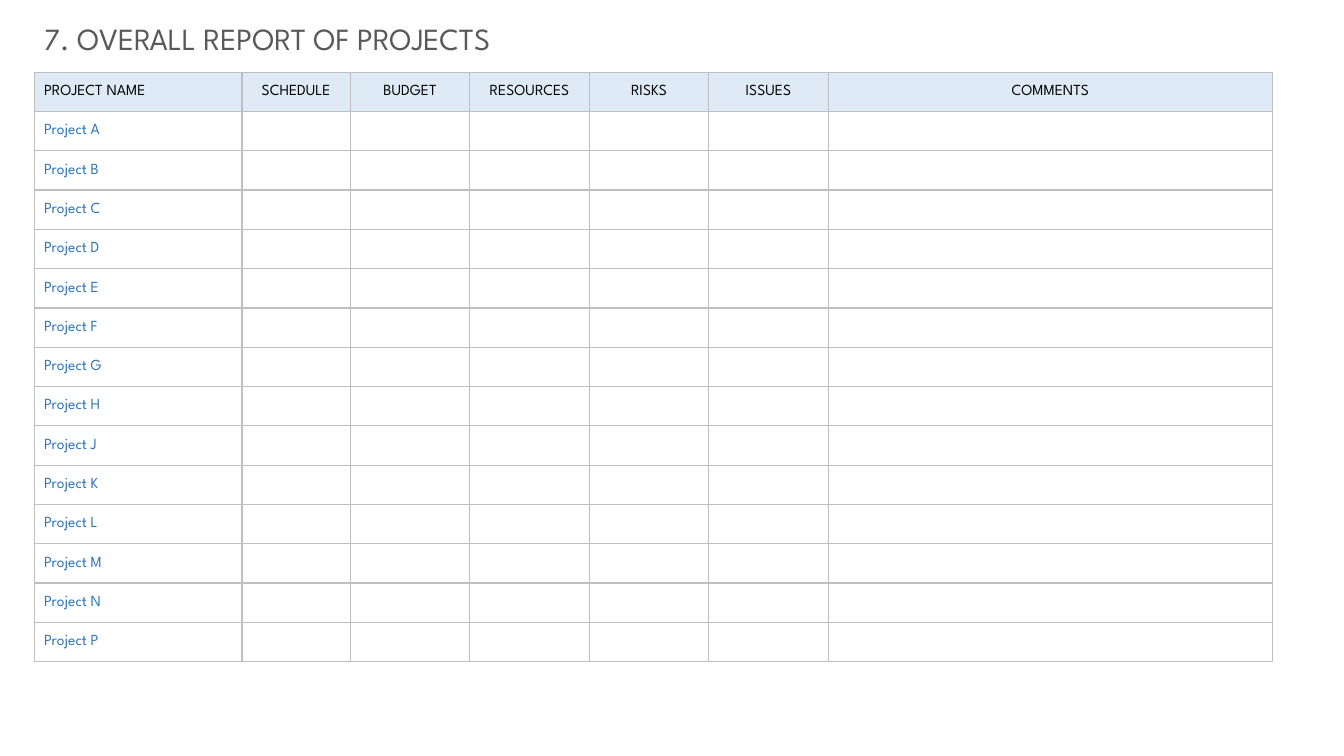
from dataclasses import dataclass

from lxml.etree import SubElement
from pptx import Presentation
from pptx.dml.color import RGBColor
from pptx.enum.text import MSO_ANCHOR, MSO_AUTO_SIZE, PP_ALIGN
from pptx.oxml.ns import qn
from pptx.slide import Slide
from pptx.table import _Cell as Cell
from pptx.text.text import _Paragraph as Paragraph
from pptx.util import Cm, Pt

FONT = "League Spartan"
TITLE_COLOUR = "595959"
HEADER_COLOUR = "000000"
PROJECT_COLOUR = "2E75B6"
HEADER_FILL = "DEEBF7"
BODY_FILL = "FFFFFF"
BORDER_COLOUR = "BFBFBF"
LEFT = Cm(0.86)
ROW_HEIGHT = Cm(0.99)
PROJECT_LETTERS = "ABCDEFGHJKLMNP"


@dataclass(frozen=True)
class Column:
    heading: str
    width: float
    alignment: PP_ALIGN = PP_ALIGN.CENTER


COLUMNS = [
    Column("PROJECT NAME", 5.24, PP_ALIGN.LEFT),
    Column("SCHEDULE", 2.73),
    Column("BUDGET", 3.01),
    Column("RESOURCES", 3.01),
    Column("RISKS", 3.01),
    Column("ISSUES", 3.01),
    Column("COMMENTS", 11.2),
]


def colour(value: str) -> RGBColor:
    return RGBColor.from_string(value)


def add_text(paragraph: Paragraph, text: str, size: float, text_colour: str) -> None:
    run = paragraph.add_run()
    run.text = text
    run.font.name = FONT
    run.font.size = Pt(size)
    run.font.color.rgb = colour(text_colour)


def add_borders(cell: Cell) -> None:
    properties = cell._tc.get_or_add_tcPr()
    for side in ("lnL", "lnR", "lnT", "lnB"):
        line = SubElement(properties, qn(f"a:{side}"), w=str(Pt(1)))
        fill = SubElement(line, qn("a:solidFill"))
        SubElement(fill, qn("a:srgbClr"), val=BORDER_COLOUR)


def format_cell(cell: Cell, fill_colour: str) -> None:
    add_borders(cell)
    cell.fill.solid()
    cell.fill.fore_color.rgb = colour(fill_colour)
    cell.vertical_anchor = MSO_ANCHOR.MIDDLE
    cell.margin_left = cell.margin_right = Cm(0.25)
    cell.margin_top = cell.margin_bottom = 0


def add_title(slide: Slide) -> None:
    title = slide.shapes.title
    title.left, title.top = LEFT, Cm(0.36)
    title.width, title.height = Cm(13.16), Cm(1.19)
    frame = title.text_frame
    frame.word_wrap = False
    frame.auto_size = MSO_AUTO_SIZE.SHAPE_TO_FIT_TEXT
    frame.vertical_anchor = MSO_ANCHOR.TOP
    paragraph = frame.paragraphs[0]
    paragraph.alignment = PP_ALIGN.LEFT
    add_text(paragraph, "7. OVERALL REPORT OF PROJECTS", 22, TITLE_COLOUR)


def add_report(slide: Slide) -> None:
    row_count = len(PROJECT_LETTERS) + 1
    width = Cm(sum(column.width for column in COLUMNS))
    frame = slide.shapes.add_table(
        row_count, len(COLUMNS), LEFT, Cm(1.82), width, ROW_HEIGHT * row_count
    )
    table = frame.table
    table.first_row = table.horz_banding = False
    for row in table.rows:
        row.height = ROW_HEIGHT
    for index, column in enumerate(COLUMNS):
        table.columns[index].width = Cm(column.width)
        for row in range(row_count):
            format_cell(table.cell(row, index), BODY_FILL if row else HEADER_FILL)
        paragraph = table.cell(0, index).text_frame.paragraphs[0]
        paragraph.alignment = column.alignment
        add_text(paragraph, column.heading, 11, HEADER_COLOUR)
    for row, letter in enumerate(PROJECT_LETTERS, start=1):
        paragraph = table.cell(row, 0).text_frame.paragraphs[0]
        add_text(paragraph, f"Project {letter}", 11, PROJECT_COLOUR)


def main() -> None:
    presentation = Presentation()
    presentation.slide_width = Cm(33.87)
    presentation.slide_height = Cm(19.05)
    slide = presentation.slides.add_slide(presentation.slide_layouts[5])
    add_report(slide)
    add_title(slide)
    presentation.save("out.pptx")


if __name__ == "__main__":
    main()
